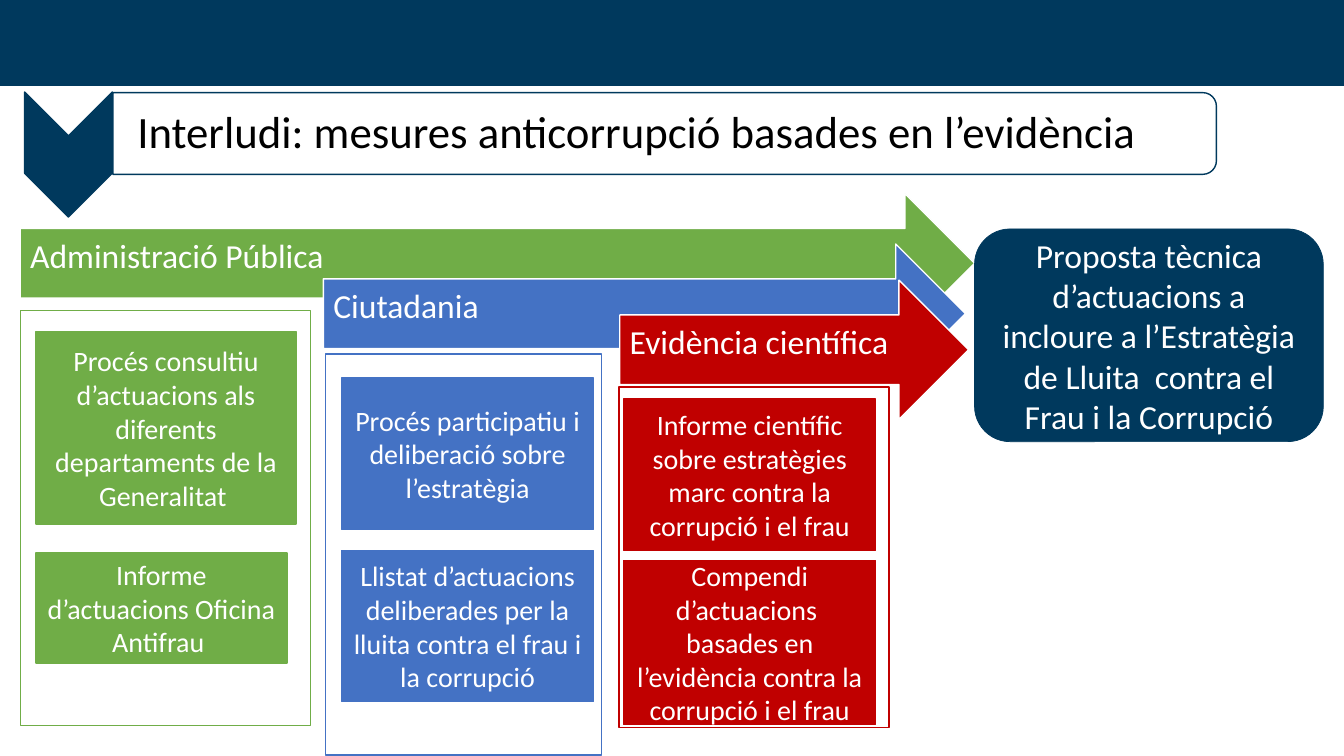
from dataclasses import dataclass

import pptx
import pptx.dml.color
import pptx.enum.shapes
import pptx.enum.text
import pptx.util
from pptx.util import Cm

Shape = pptx.enum.shapes.MSO_SHAPE
Align = pptx.enum.text.PP_ALIGN


@dataclass(frozen=True)
class Theme:
    font: str = "Calibri"
    navy: str = "00395D"
    green: str = "70AD47"
    blue: str = "4472C4"
    red: str = "C00000"
    white: str = "FFFFFF"
    black: str = "000000"
    title_size: int = 32
    heading_size: int = 24
    body_size: int = 20


THEME = Theme()
ARROW_HEIGHT = 3.51
TITLE_INSETS = (0.64, 0.05, 0.05, 0.05)
ARROW_INSETS = (0.25, 0.25, 0.71, 0.56)
BOX_INSETS = (0.25, 0.13, 0.25, 0.13)

# Each strand: colour, heading, arrow (left, top, width), frame, boxes
STRANDS = [
    (THEME.green, "Administració Pública", (0.51, 4.88, 24.05),
     (0.51, 7.82, 7.32, 10.46), [
         ("Procés consultiu d’actuacions als diferents departaments de la Generalitat ",
          (0.91, 8.36, 6.55, 4.85)),
         ("Informe d’actuacions Oficina Antifrau ", (0.91, 13.94, 6.32, 2.77)),
     ]),
    (THEME.blue, "Ciutadania", (8.15, 6.15, 16.18),
     (8.2, 8.92, 6.96, 10.11), [
         ("Procés participatiu i deliberació sobre l’estratègia",
          (8.61, 9.53, 6.35, 3.81)),
         ("Llistat d’actuacions deliberades per la lluita contra el frau i la corrupció",
          (8.61, 13.87, 6.35, 3.81)),
     ]),
    (THEME.red, "Evidència científica", (15.62, 7.06, 8.79),
     (15.6, 9.75, 6.81, 8.59), [
         ("Informe científic sobre estratègies marc contra la corrupció i el frau",
          (15.72, 10.06, 6.35, 3.81)),
         ("Compendi d’actuacions  basades en l’evidència contra la corrupció i el frau",
          (15.72, 14.12, 6.35, 4.14)),
     ]),
]


def rgb(colour):
    return pptx.dml.color.RGBColor.from_string(colour)


def add_block(page, kind, place, fill, line, line_width=1):
    block = page.shapes.add_shape(kind, *map(Cm, place))
    block.shadow.inherit = False
    block.fill.solid()
    block.fill.fore_color.rgb = rgb(fill)
    block.line.color.rgb = rgb(line)
    block.line.width = pptx.util.Pt(line_width)
    return block


def write(box, text, size, colour=THEME.white, align=Align.CENTER,
          insets=BOX_INSETS, spacing=1.0):
    frame = box.text_frame
    frame.word_wrap = True
    frame.vertical_anchor = pptx.enum.text.MSO_ANCHOR.MIDDLE
    (frame.margin_left, frame.margin_top,
     frame.margin_right, frame.margin_bottom) = map(Cm, insets)
    para = frame.paragraphs[0]
    para.text = text
    para.alignment = align
    para.line_spacing = spacing
    para.font.name = THEME.font
    para.font.size = pptx.util.Pt(size)
    para.font.color.rgb = rgb(colour)


def add_title(page, text):
    # Both shapes are turned a quarter: the chevron points down
    chevron = add_block(page, Shape.CHEVRON, (0.15, 2.79, 3.15, 2.21),
                        THEME.navy, THEME.navy)
    panel = add_block(page, Shape.ROUND_2_SAME_RECTANGLE,
                      (15.72, -10.54, 2.06, 27.81), THEME.white, THEME.navy)
    chevron.rotation = panel.rotation = 90
    box = page.shapes.add_textbox(*map(Cm, (2.82, 2.44, 27.71, 1.85)))
    write(box, text, THEME.title_size, THEME.black, Align.LEFT,
          TITLE_INSETS, 0.9)


def add_strand(page, colour, heading, arrow_place, frame_place, boxes):
    arrow = add_block(page, Shape.RIGHT_ARROW, (*arrow_place, ARROW_HEIGHT),
                      colour, THEME.white)
    write(arrow, heading, THEME.heading_size, align=Align.LEFT,
          insets=ARROW_INSETS, spacing=0.9)
    add_block(page, Shape.RECTANGLE, frame_place, THEME.white, colour)
    for text, place in boxes:
        box = add_block(page, Shape.RECTANGLE, place, colour, colour)
        write(box, text, THEME.body_size)


def main():
    deck = pptx.Presentation()
    deck.slide_width, deck.slide_height = Cm(33.87), Cm(19.05)
    page = deck.slides.add_slide(deck.slide_layouts[6])

    # Header band and title
    add_block(page, Shape.RECTANGLE, (0, 0, 33.87, 2.16), THEME.navy, THEME.navy)
    add_title(page, "Interludi: mesures anticorrupció basades en l’evidència")

    # Three strands of evidence
    for strand in STRANDS:
        add_strand(page, *strand)

    # Resulting proposal
    proposal = add_block(page, Shape.ROUNDED_RECTANGLE, (24.56, 5.77, 8.79, 5.36),
                         THEME.navy, THEME.navy, 0.5)
    write(proposal, "Proposta tècnica d’actuacions a incloure a l’Estratègia "
          "de Lluita  contra el Frau i la Corrupció", THEME.heading_size)

    deck.save("out.pptx")


if __name__ == "__main__":
    main()
